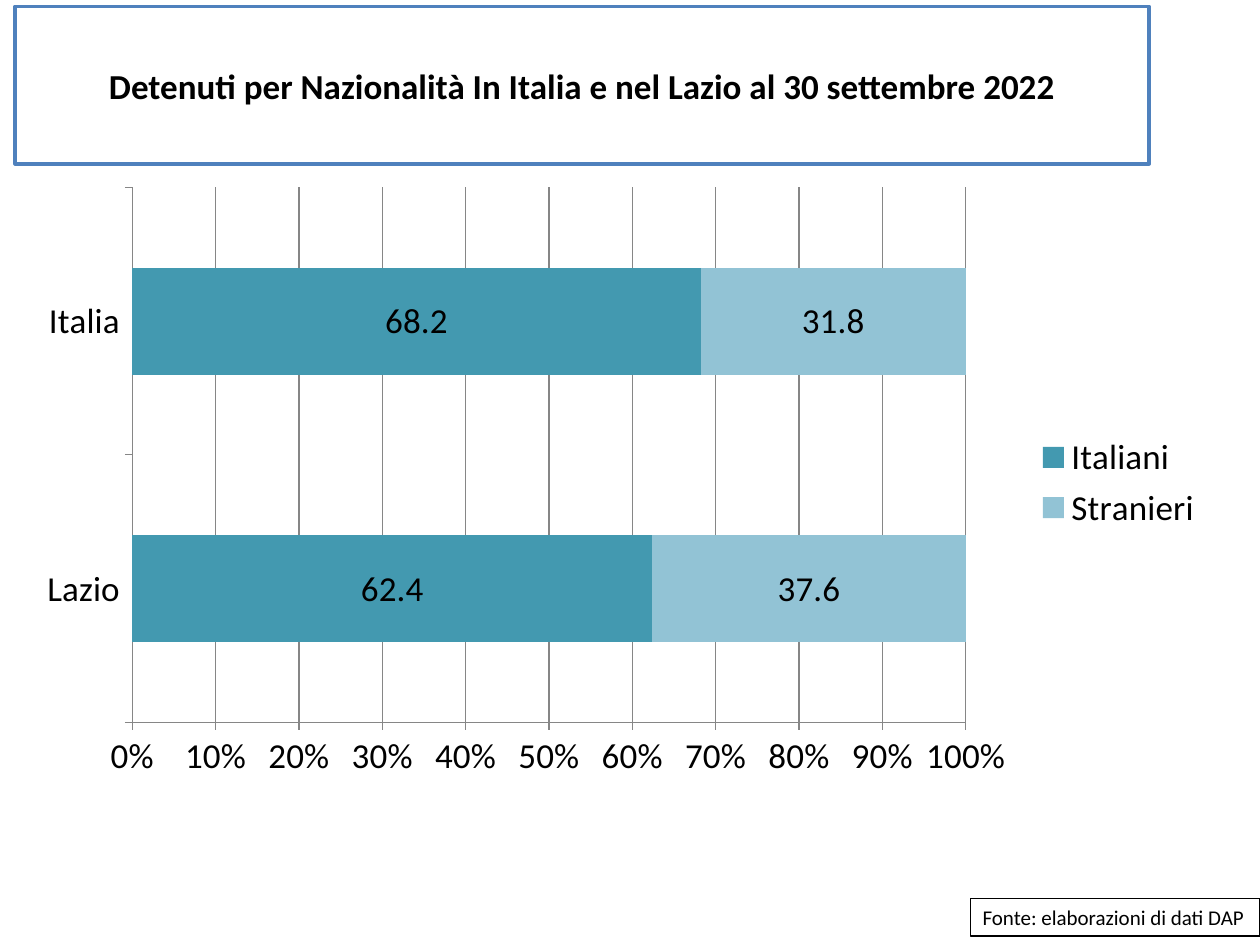
from lxml.etree import SubElement
from pptx import Presentation
from pptx.chart.data import CategoryChartData
from pptx.dml.color import RGBColor
from pptx.enum.chart import (XL_CHART_TYPE as ChartType, XL_LABEL_POSITION as LabelPos,
                             XL_LEGEND_POSITION as LegendPos, XL_TICK_MARK as Tick)
from pptx.enum.text import MSO_ANCHOR as Anchor, MSO_AUTO_SIZE as AutoSize, PP_ALIGN as Align
from pptx.oxml.ns import qn
from pptx.util import Inches, Pt

COLORS = {"white": "FFFFFF", "black": "000000", "frame": "4F81BD", "axis": "868686",
          "Italiani": "4399B0", "Stranieri": "92C3D5"}
FONT = "Calibri"


class SlideBuilder:
    def __init__(self, slide):
        self.slide = slide

    def color(self, name):
        return RGBColor.from_string(COLORS[name])

    def style_font(self, font, size, bold=False):
        font.name, font.size, font.bold = FONT, Pt(size), bold
        font.color.rgb = self.color("black")

    def style_line(self, line, name, width):
        line.color.rgb = self.color(name)
        line.width = Pt(width)

    def frame(self, box, border, width):
        box.fill.solid()
        box.fill.fore_color.rgb = self.color("white")
        self.style_line(box.line, border, width)

    def add_text(self, box, text, size, align, bold=False):
        paragraph = box.text_frame.paragraphs[0]
        paragraph.alignment = align
        run = paragraph.add_run()
        run.text = text
        self.style_font(run.font, size, bold)

    def title(self, text, left, top, width, height):
        heading = self.slide.shapes.title
        heading.left, heading.top = Inches(left), Inches(top)
        heading.width, heading.height = Inches(width), Inches(height)
        heading.text_frame.vertical_anchor = Anchor.MIDDLE
        self.frame(heading, "frame", 2)
        self.add_text(heading, text, 20, Align.CENTER, bold=True)

    def source_note(self, text, left, top, width, height):
        note = self.slide.shapes.add_textbox(
            Inches(left), Inches(top), Inches(width), Inches(height))
        note.text_frame.word_wrap = False
        note.text_frame.auto_size = AutoSize.SHAPE_TO_FIT_TEXT
        self.frame(note, "black", 0.75)
        self.add_text(note, text, 12, Align.LEFT)

    def stacked_bars(self, regions, shares, left, top, width, height):
        data = CategoryChartData(number_format="0.0")
        data.categories = regions
        for group, values in shares.items():
            data.add_series(group, values)
        chart = self.slide.shapes.add_chart(
            ChartType.BAR_STACKED_100, Inches(left), Inches(top),
            Inches(width), Inches(height), data).chart
        self.style_font(chart.font, 20)
        chart.has_title = False
        chart.has_legend = True
        chart.legend.position = LegendPos.RIGHT
        chart.legend.include_in_layout = False
        plot = chart.plots[0]
        plot.gap_width, plot.overlap = 150, 100
        plot.vary_by_categories = False
        for series in plot.series:
            series.format.fill.solid()
            series.format.fill.fore_color.rgb = self.color(series.name)
            labels = series.data_labels
            labels.show_value = True
            labels.position = LabelPos.CENTER
            labels.number_format, labels.number_format_is_linked = "0.0", False
            self.style_font(labels.font, 20)
        for axis in (chart.category_axis, chart.value_axis):
            axis.major_tick_mark, axis.minor_tick_mark = Tick.OUTSIDE, Tick.NONE
            self.style_line(axis.format.line, "axis", 0.75)
        scale = chart.value_axis
        scale.has_major_gridlines = True
        self.style_line(scale.major_gridlines.format.line, "axis", 0.75)
        scale.major_unit = 0.1
        scale.tick_labels.number_format = "0%"
        scale.tick_labels.number_format_is_linked = False
        self.place_plot(chart, x=0.09, y=0.02, w=0.7, h=0.87)

    def place_plot(self, chart, **fractions):
        area = chart.element.find(".//" + qn("c:plotArea"))
        layout = area.find(qn("c:layout"))
        if layout is None:
            layout = SubElement(area, qn("c:layout"))
            area.insert(0, layout)
        manual = SubElement(layout, qn("c:manualLayout"))
        settings = {"layoutTarget": "inner", "xMode": "edge", "yMode": "edge", **fractions}
        for tag, value in settings.items():
            SubElement(manual, qn("c:" + tag)).set("val", str(value))


def main():
    deck = Presentation()
    deck.slide_width, deck.slide_height = Inches(10), Inches(7.5)
    builder = SlideBuilder(deck.slides.add_slide(deck.slide_layouts[5]))
    builder.title("Detenuti per Nazionalità In Italia e nel Lazio al 30 settembre 2022",
                  0.12, 0.05, 9, 1.25)
    builder.source_note("Fonte: elaborazioni di dati DAP", 7.7, 7.13, 2.3, 0.3)
    builder.stacked_bars(["Lazio", "Italia"],
                         {"Italiani": (62.4, 68.2), "Stranieri": (37.6, 31.8)},
                         0.2, 1.39, 9.45, 4.88)
    deck.save("out.pptx")


if __name__ == "__main__":
    main()
